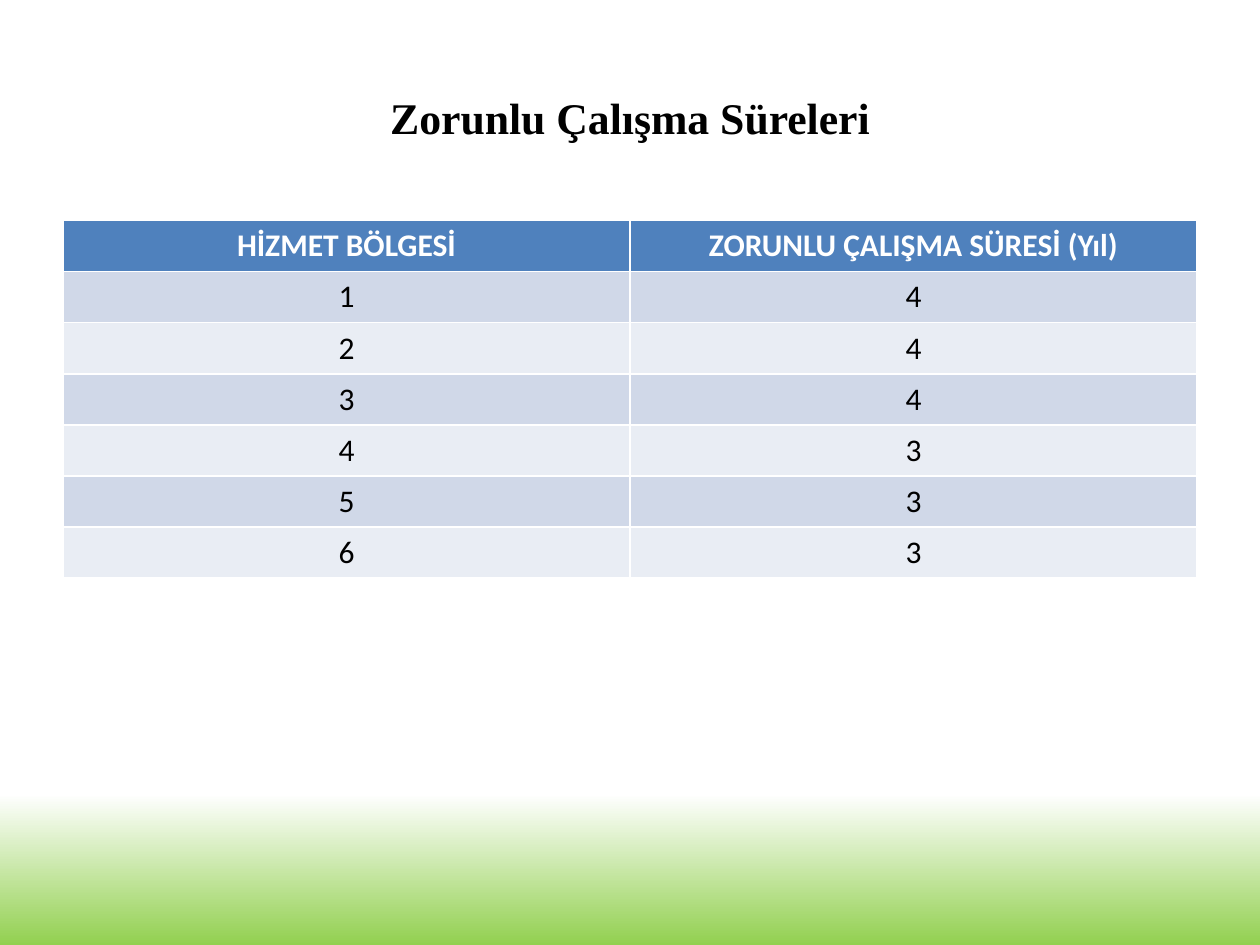
"""Build a slide with a table of compulsory service periods by region."""
from pptx import Presentation
from pptx.dml.color import RGBColor
from pptx.enum import text
from pptx.util import Pt

TITLE = "Zorunlu Çalışma Süreleri"
HEADER = ("HİZMET BÖLGESİ", "ZORUNLU ÇALIŞMA SÜRESİ (Yıl)")
PERIODS = [(1, 4), (2, 4), (3, 4), (4, 3), (5, 3), (6, 3)]
BACKGROUND_STOPS = [(0.84, "FFFFFF"), (1, "92D050")]
HEADER_FILL = "4F81BD"
BAND_FILLS = ("D0D8E8", "E9EDF4")
LEFT, WIDTH = 36, 648
TABLE_TOP, ROW_HEIGHT = 126, 29.2


def color(value):
    return RGBColor.from_string(value)


def format_paragraph(paragraph, name, size, ink, bold):
    paragraph.alignment = text.PP_ALIGN.CENTER
    font = paragraph.font
    font.name, font.size, font.bold = name, Pt(size), bold
    font.color.rgb = color(ink)


def paint_background(slide):
    fill = slide.background.fill
    fill.gradient()
    fill.gradient_angle = 270
    for stop, (position, value) in zip(fill.gradient_stops, BACKGROUND_STOPS):
        stop.position = position
        stop.color.rgb = color(value)


def add_title(slide):
    title = slide.shapes.title
    title.left, title.top = Pt(LEFT), Pt(21.6)
    title.width, title.height = Pt(WIDTH), Pt(90)
    title.text_frame.text = TITLE
    title.text_frame.vertical_anchor = text.MSO_ANCHOR.MIDDLE
    format_paragraph(title.text_frame.paragraphs[0], "Times New Roman", 25, "000000", True)


def add_period_table(slide):
    rows = [HEADER, *PERIODS]
    table = slide.shapes.add_table(
        len(rows), len(HEADER), Pt(LEFT), Pt(TABLE_TOP), Pt(WIDTH), Pt(ROW_HEIGHT * len(rows))
    ).table
    for index, values in enumerate(rows):
        is_header = index == 0
        fill = HEADER_FILL if is_header else BAND_FILLS[(index - 1) % 2]
        ink = "FFFFFF" if is_header else "000000"
        for cell, value in zip(table.rows[index].cells, values):
            cell.text = str(value)
            cell.fill.solid()
            cell.fill.fore_color.rgb = color(fill)
            format_paragraph(cell.text_frame.paragraphs[0], "Calibri", 18, ink, is_header)


def main():
    presentation = Presentation()
    presentation.slide_width, presentation.slide_height = Pt(720), Pt(540)
    slide = presentation.slides.add_slide(presentation.slide_layouts.get_by_name("Title Only"))
    paint_background(slide)
    add_title(slide)
    add_period_table(slide)
    presentation.save("out.pptx")


if __name__ == "__main__":
    main()
